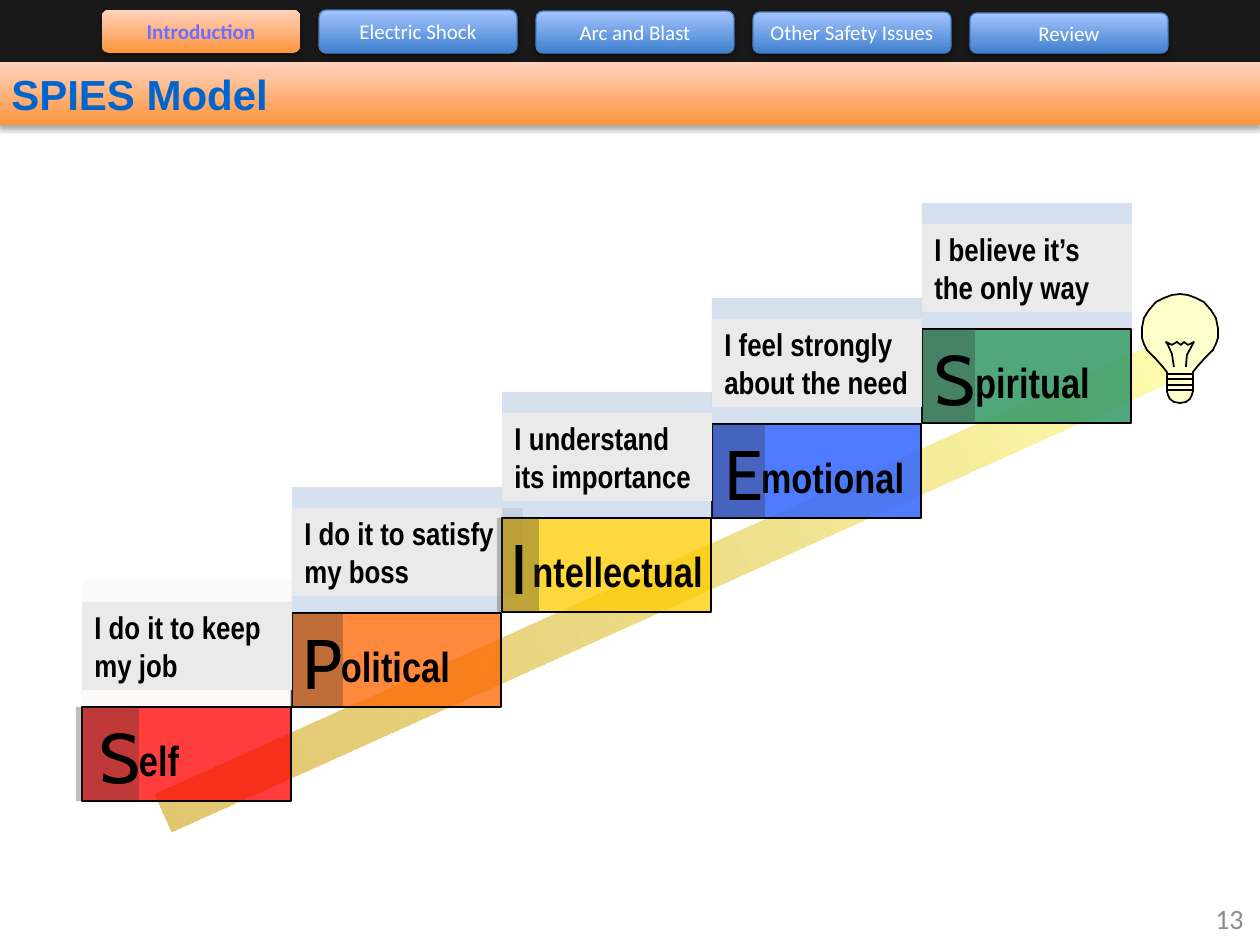
"""Build the SPIES Model slide: a staircase of five motives rising to a light bulb."""
from dataclasses import dataclass

from lxml.etree import SubElement
from pptx import Presentation
from pptx.dml.color import RGBColor
from pptx.enum.shapes import MSO_SHAPE as Preset
from pptx.enum.text import MSO_ANCHOR as Anchor, PP_ALIGN as Align
from pptx.oxml.ns import qn
from pptx.shapes.autoshape import Shape
from pptx.util import Emu, Pt

SCALE = 914400 / 126
COLORS = {
    "black": "000000", "white": "FFFFFF", "bar": "191919", "number": "8C8C8C",
    "title": "0065CC", "active": "6C6EFF", "tab_line": "4B7EBC",
    "orange_low": "FF953E", "orange_high": "FFD2BD",
    "blue_low": "3F80CE", "blue_high": "A4C4FF",
    "gold": "CC9900", "cream": "FFFF99", "bulb": "FFFFCC",
    "panel": "4F81BD", "pale": "EEECE1", "note": "EAEAEA", "shade": "333333",
    "red": "FF0000", "amber": "FF6600", "yellow": "FFCC00",
    "blue": "3366FF", "green": "339966",
}
TABS = ["Introduction", "Electric Shock", "Arc and Blast", "Other Safety Issues", "Review"]
ORANGE = ("orange_low", "orange_high")
BLUE = ("blue_low", "blue_high")
BULB_CENTER = 1180
BULB_HALF = [
    (0, 403), (6, 402), (10, 399), (12, 395), (13, 391), (13, 372), (17, 367),
    (25, 358), (33, 350), (36, 344), (38, 338), (38, 328), (36, 318), (31, 310),
    (24, 302), (16, 298), (8, 295), (0, 294),
]
FILAMENT = [
    (-6, 367), (-8, 354), (-12, 345), (-14, 342), (-8, 345), (-3, 342),
    (1, 345), (4, 342), (8, 345), (14, 342), (7, 355), (6, 367),
]
THREAD = [
    (-13, 374), (13, 374), (13, 379), (-13, 379),
    (-13, 385), (13, 385), (13, 390), (-13, 390),
]


@dataclass
class Box:
    """A rectangle in px."""
    left: int
    top: int
    width: int
    height: int

    def emu(self) -> list[Emu]:
        """Return the four lengths in EMU."""
        return [Emu(round(n * SCALE)) for n in (self.left, self.top, self.width, self.height)]


@dataclass
class Step:
    """One stair; each span is an offset from its left edge and a width."""
    level: int
    initial: str
    rest: str
    note: str
    color: str
    alpha: int
    rest_span: tuple[int, int]
    shade_span: tuple[int, int]
    initial_span: tuple[int, int]
    note_width: int = 210
    panel: str = "panel"
    wrap_initial: bool = False


STEPS = [
    Step(4, "S", "piritual", "I believe it’s the only way", "green", 86,
         (0, 221), (0, 53), (0, 49), wrap_initial=True),
    Step(3, "E", "motional", "I feel strongly about the need", "blue", 86,
         (10, 221), (0, 53), (0, 59)),
    Step(1, "P", "olitical", "I do it to satisfy my boss", "amber", 76,
         (9, 189), (-2, 53), (-2, 62), note_width=231),
    Step(0, "S", "elf", "I do it to keep my job", "red", 76,
         (35, 84), (-6, 63), (5, 62), panel="pale"),
    Step(2, "I", "ntellectual", "I understand its importance", "yellow", 76,
         (5, 221), (-5, 42), (-5, 44)),
]


def rgb(name: str) -> RGBColor:
    """Look up a named colour."""
    return RGBColor.from_string(COLORS[name])


def add_alpha(color_node, percent: int) -> None:
    """Make a colour node partly transparent."""
    SubElement(color_node, qn("a:alpha")).set("val", str(percent * 1000))


def style(shape: Shape, fill: str | None = None, alpha: int = 100,
          line: str | None = None, weight: float = 0.75) -> None:
    """Give a shape a flat fill and an outline."""
    shape.shadow.inherit = False
    if fill:
        shape.fill.solid()
        shape.fill.fore_color.rgb = rgb(fill)
        if alpha < 100:
            add_alpha(shape._element.spPr.find(".//" + qn("a:srgbClr")), alpha)
    else:
        shape.fill.background()
    if line:
        shape.line.color.rgb = rgb(line)
        shape.line.width = Pt(weight)
    else:
        shape.line.fill.background()


def add_block(page, box: Box, preset: Preset = Preset.RECTANGLE, **look) -> Shape:
    """Draw a styled preset shape."""
    shape = page.shapes.add_shape(preset, *box.emu())
    style(shape, **look)
    return shape


def set_gradient(shape: Shape, colors: tuple[str, str], angle: int,
                 alphas: tuple[int, int] = (100, 100)) -> None:
    """Fill a shape with a two-colour gradient."""
    shape.fill.gradient()
    shape.fill.gradient_angle = angle
    for stop, color in zip(shape.fill.gradient_stops, colors):
        stop.color.rgb = rgb(color)
    for node, alpha in zip(shape._element.spPr.iter(qn("a:srgbClr")), alphas):
        if alpha < 100:
            add_alpha(node, alpha)


def add_shadow(shape: Shape) -> None:
    """Cast a soft shadow below a shape."""
    effects = shape._element.spPr.find(qn("a:effectLst"))
    shadow = SubElement(effects, qn("a:outerShdw"), blurRad="40000", dist="23000",
                        dir="5400000", rotWithShape="0")
    add_alpha(SubElement(shadow, qn("a:srgbClr"), val=COLORS["black"]), 35)


def write(shape: Shape, text: str, *, size: int, font: str, color: str = "black",
          bold: bool = False, align: Align = Align.LEFT, anchor: Anchor = Anchor.TOP,
          wrap: bool = True) -> None:
    """Put one formatted paragraph in a shape."""
    frame = shape.text_frame
    frame.word_wrap = wrap
    frame.vertical_anchor = anchor
    para = frame.paragraphs[0]
    para.alignment = align
    span = para.add_run()
    span.text = text
    span.font.size = Pt(size)
    span.font.name = font
    span.font.bold = bold
    span.font.color.rgb = rgb(color)


def add_label(page, box: Box, text: str, **text_format) -> None:
    """Add a free text box."""
    write(page.shapes.add_textbox(*box.emu()), text, **text_format)


def add_header(page) -> None:
    """Draw the tab bar and the title band."""
    add_block(page, Box(0, 0, 1260, 62), fill="bar")
    for index, name in enumerate(TABS):
        active = index == 0
        top = 10 + index * 3 // 4
        tab = add_block(page, Box(102 + 217 * index, top, 198, 53 - top),
                        Preset.ROUNDED_RECTANGLE, line=None if active else "tab_line")
        set_gradient(tab, ORANGE if active else BLUE, 90)
        add_shadow(tab)
        write(tab, name, size=12, font="Calibri", color="active" if active else "white",
              bold=active, align=Align.CENTER, anchor=Anchor.MIDDLE)
    band = add_block(page, Box(-1, 62, 1261, 63))
    set_gradient(band, ORANGE, 90)
    add_shadow(band)
    write(band, "SPIES Model", size=24, font="Arial", color="title", bold=True)


def add_beam(page) -> None:
    """Draw the slanted beam behind the stairs."""
    beam = add_block(page, Box(113, 559, 1134, 42), Preset.PENTAGON)
    beam.adjustments[0] = 0.83
    beam.rotation = 335.8
    set_gradient(beam, ("gold", "cream"), 0, (56, 76))


def add_step(page, step: Step) -> None:
    """Draw one stair with its note, word and initial."""
    left = 82 + 210 * step.level
    top = 581 - 189 * step.level // 2
    base = top + 126
    narrow = {"font": "Arial Narrow", "bold": True}

    def place(span: tuple[int, int], y: int, height: int) -> Box:
        return Box(left + span[0], y, span[1], height)

    add_block(page, Box(left, top, 210, 126), fill=step.panel, alpha=23)
    note = add_block(page, Box(left, top + 21, step.note_width, 88), fill="note")
    write(note, step.note, size=18, **narrow)
    add_block(page, Box(left, base, 209, 94), fill=step.color, alpha=step.alpha, line="black")
    add_label(page, place(step.rest_span, base + 21, 63), step.rest,
              size=24, align=Align.CENTER, **narrow)
    for _ in range(2):
        add_block(page, place(step.shade_span, base, 94), fill="shade", alpha=17)
    add_label(page, place(step.initial_span, base, 97), step.initial, size=40,
              font="Cabin", align=Align.CENTER, wrap=step.wrap_initial)


def add_outline(page, points: list[tuple[int, int]], close: bool, fill: str | None) -> None:
    """Draw a line through points given around the bulb's axis."""
    start, *others = [(BULB_CENTER + x, y) for x, y in points]
    builder = page.shapes.build_freeform(*start, scale=SCALE)
    builder.add_line_segments(others, close=close)
    style(builder.convert_to_shape(), fill=fill, line="black", weight=1)


def add_bulb(page) -> None:
    """Draw the light bulb from its mirrored half."""
    mirrored = [(-x, y) for x, y in reversed(BULB_HALF[1:-1])]
    add_outline(page, BULB_HALF + mirrored, True, "bulb")
    for points in (FILAMENT, THREAD):
        add_outline(page, points, False, None)


def main() -> None:
    """Build and save the deck."""
    deck = Presentation()
    deck.slide_width, deck.slide_height = Box(0, 0, 1260, 945).emu()[2:]
    page = deck.slides.add_slide(deck.slide_layouts[6])
    add_header(page)
    add_beam(page)
    for step in STEPS:
        add_step(page, step)
    add_bulb(page)
    add_label(page, Box(1195, 893, 61, 50), "13", size=16, font="Calibri", color="number",
              align=Align.RIGHT, anchor=Anchor.MIDDLE)
    deck.save("out.pptx")


if __name__ == "__main__":
    main()
